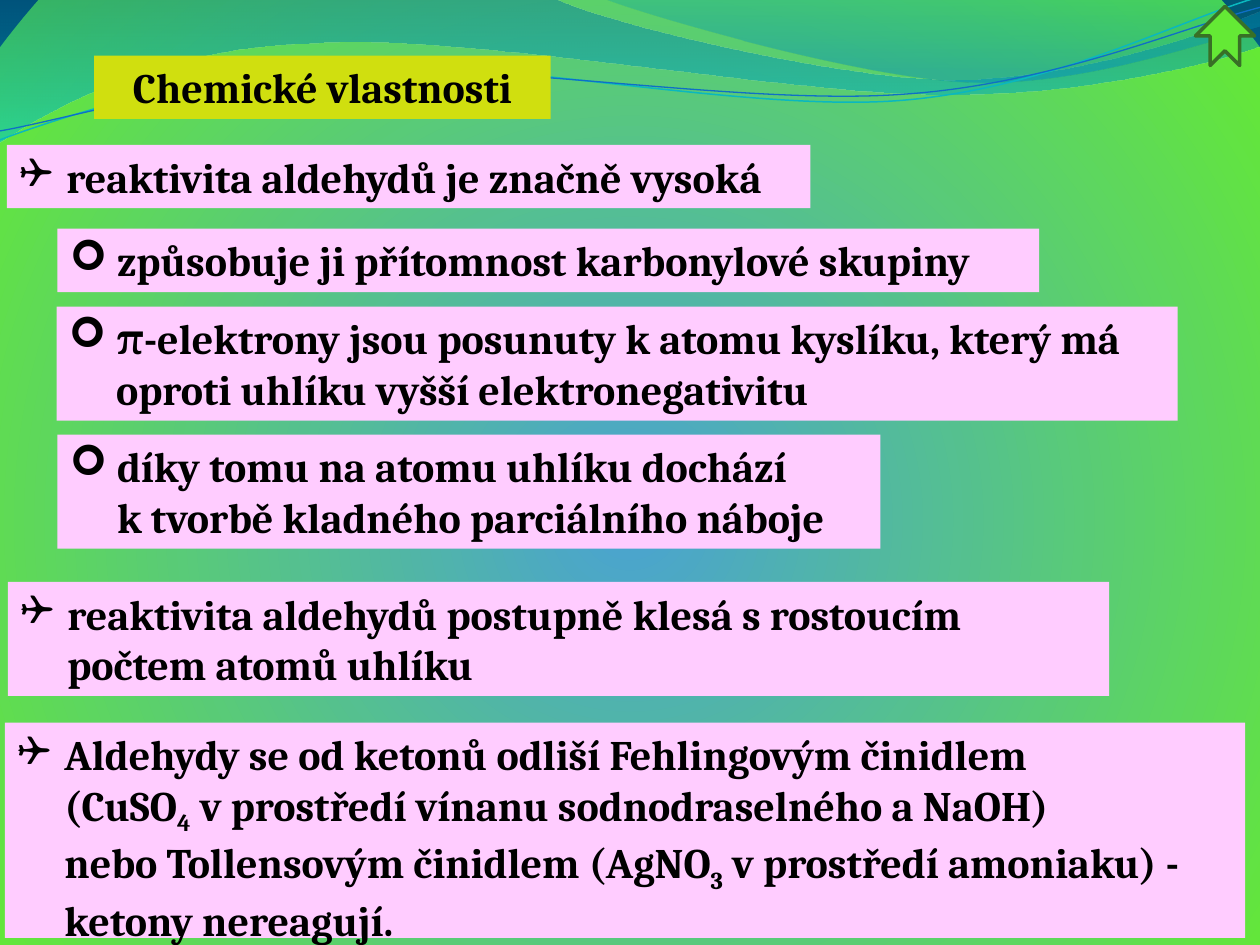
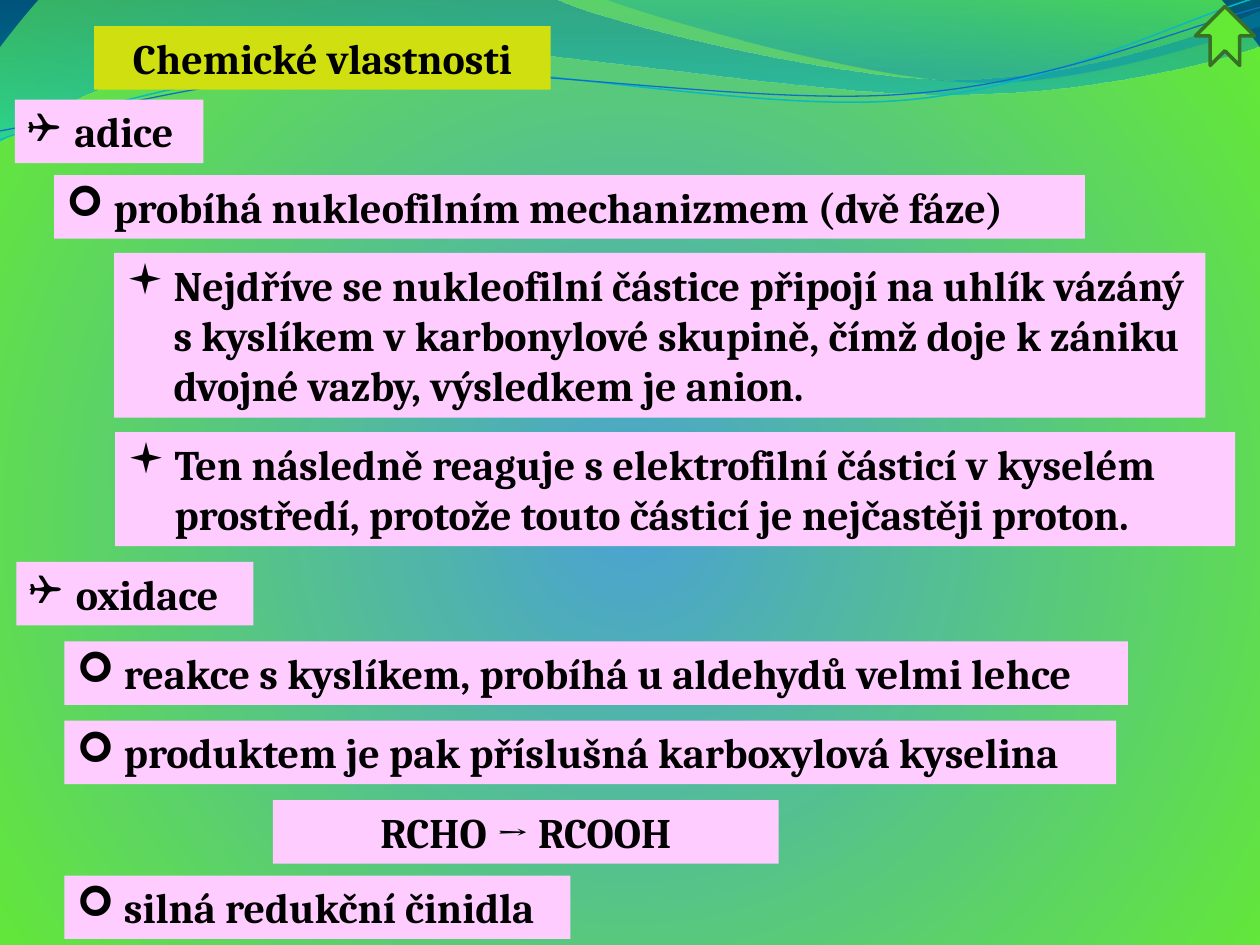
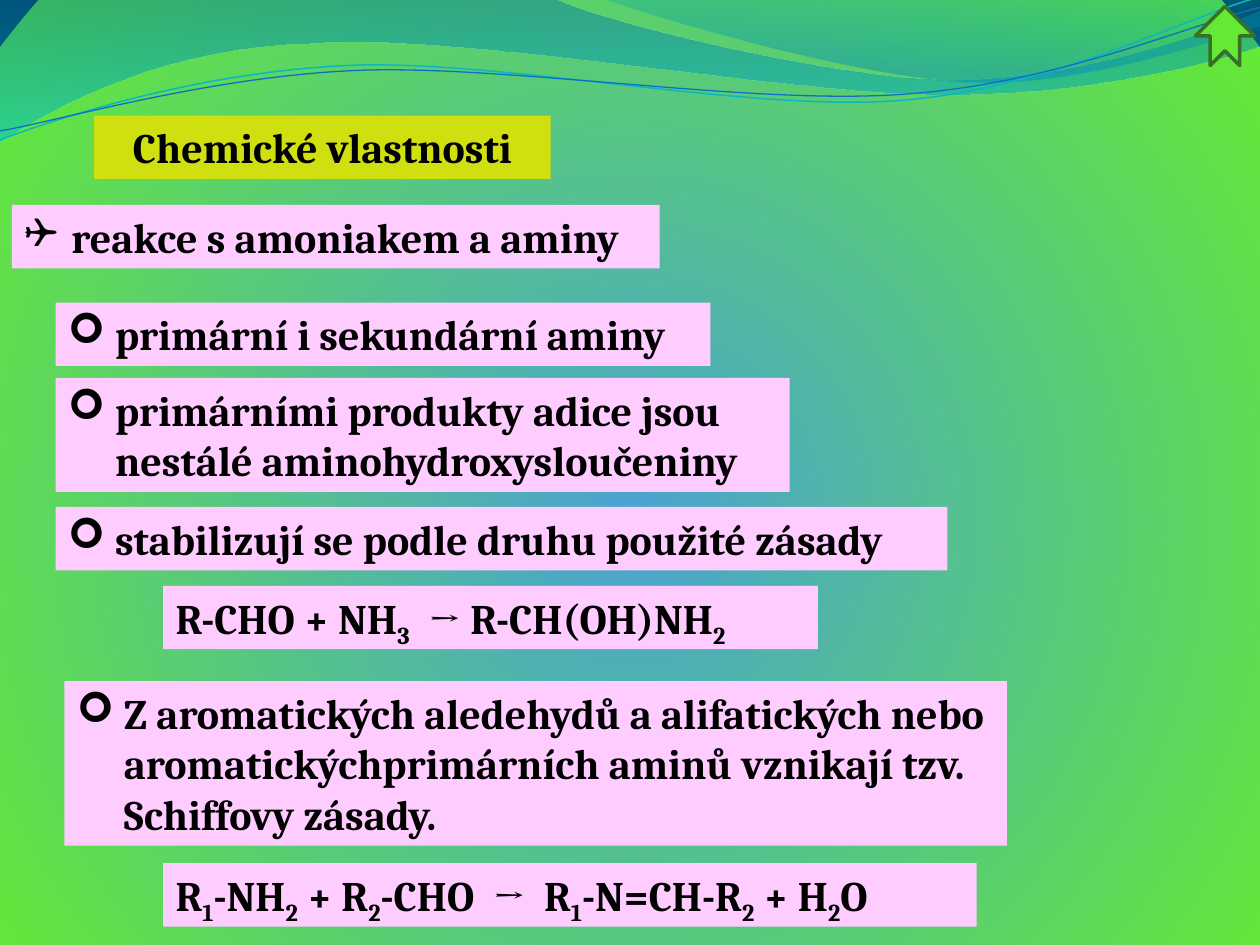
from lxml import etree
from pptx import Presentation
from pptx.dml.color import RGBColor
from pptx.enum.shapes import MSO_SHAPE as SHAPE
from pptx.enum.text import MSO_ANCHOR as ANCHOR, MSO_AUTO_SIZE as AUTO, PP_ALIGN as ALIGN
from pptx.oxml.ns import qn
from pptx.util import Cm, Pt

FONT, BULLET_FONT = "Cambria", "Wingdings"
BLACK, PINK, OLIVE, GREEN, DARK_GREEN = "000000", "FFCCFF", "D0DF0F", "64E935", "387026"
TOPIC, POINT, DETAIL = "❑", "➢", "▪"
INDENT = Cm(0.95)
NBSP = chr(160)

WIDE_BAND = [(0, 0), (11.18, -0.03), (12.09, 0.43, 16.87, 1.6, 19.25, 1.6),
             (21.67, 1.6, 24.33, 0.66, 25.4, 0.23), (25.43, 0.91),
             (24.97, 1.12, 22.1, 1.93, 18.95, 1.9), (15.8, 1.9, 9.7, 0.71, 6.53, 0.86),
             (3.28, 0.91, 1.17, 2.11, -0.03, 2.87)]
RIGHT_BAND = [(12.17, -0.03), (12.93, 0.28, 17.32, 1.57, 19.53, 1.65),
              (21.74, 1.75, 24.41, 0.81, 25.4, 0.53), (25.4, 0)]
LIGHT_WAVE = [(0, 2.82), (1.22, 2.36, 4.01, 1.45, 7.04, 1.32),
              (10.03, 1.19, 15.06, 2.26, 18.11, 2.03), (21.16, 1.8, 23.83, 0.38, 25.35, -0.05)]
DARK_WAVE = [(0, 2.64), (1.19, 2.44, 4.17, 1.55, 7.19, 1.42),
             (10.24, 1.3, 15.16, 2.13, 18.21, 1.9), (21.23, 1.7, 23.9, 0.53, 25.4, 0.15)]


def rgb(value):
    """Turn a hex string into a colour."""
    return RGBColor.from_string(value)


def add_xml(parent, tag, **attrs):
    """Append a DrawingML element to a parent."""
    return etree.SubElement(parent, qn(tag), {k: str(v) for k, v in attrs.items()})


def set_gradient(fill, owner, stops, **circle):
    """Give a fill gradient stops of (percent, colour, opacity)."""
    fill.gradient()
    grad = owner.find(".//" + qn("a:gradFill"))
    for child in list(grad):
        grad.remove(child)
    stop_list = add_xml(grad, "a:gsLst")
    for pos, colour, opacity in stops:
        stop = add_xml(stop_list, "a:gs", pos=pos * 1000)
        clr = add_xml(stop, "a:srgbClr", val=colour)
        if opacity < 100:
            add_xml(clr, "a:alpha", val=opacity * 1000)
    if circle:
        path = add_xml(grad, "a:path", path="circle")
        add_xml(path, "a:fillToRect", **circle)
    else:
        add_xml(grad, "a:lin", ang=90 * 60000, scaled=0)


def bend(sp, outline):
    """Join the control points of each curved segment into a cubic curve."""
    lines = iter(sp.element.findall(".//" + qn("a:lnTo")))
    for seg in outline[1:]:
        line = next(lines)
        if len(seg) == 6:
            cubic = etree.Element(qn("a:cubicBezTo"))
            line.getparent().replace(line, cubic)
            cubic.append(line[0])
            for _ in range(2):
                line = next(lines)
                line.getparent().remove(line)
                cubic.append(line[0])


def add_curve(s, outline, stops=None, line=None, width=0.75):
    """Draw a gradient band or an open wave line."""
    points = [(Cm(seg[i]), Cm(seg[i + 1])) for seg in outline for i in range(0, len(seg), 2)]
    builder = s.shapes.build_freeform(*points[0], scale=1.0)
    builder.add_line_segments(points[1:], close=bool(stops))
    sp = builder.convert_to_shape()
    bend(sp, outline)
    sp.shadow.inherit = False
    if stops:
        set_gradient(sp.fill, sp.element.spPr, stops)
        sp.line.fill.background()
    else:
        sp.fill.background()
        sp.line.color.rgb = rgb(line)
        sp.line.width = Pt(width)
    return sp


def add_text(p, text, size=24, colour=BLACK, bold=True, align=ALIGN.LEFT, bullet=None):
    """Fill a paragraph; underscores enclose subscripts, a tilde is a fixed space."""
    p.alignment = align
    if bullet:
        pPr = p._p.get_or_add_pPr()
        pPr.set("marL", str(INDENT))
        pPr.set("indent", str(-INDENT))
        add_xml(pPr, "a:buFont", typeface=BULLET_FONT)
        add_xml(pPr, "a:buChar", char=bullet)
    for i, part in enumerate(text.replace("~", NBSP).split("_")):
        for j, line in enumerate(part.split("\n")):
            if j:
                p.add_line_break()
            r = p.add_run()
            r.text = line
            r.font.name, r.font.size, r.font.bold = FONT, Pt(size), bold
            r.font.color.rgb = rgb(colour)
            if i % 2:
                r.font._element.set("baseline", "-25000")


def add_box(s, left, top, width, text, lines=1, fill=PINK, **text_format):
    """Add a filled text box as tall as its lines."""
    sp = s.shapes.add_shape(SHAPE.RECTANGLE, Cm(left), Cm(top), Cm(width),
                            Cm(0.26 + 1.02 * lines))
    sp.shadow.inherit = False
    sp.fill.solid()
    sp.fill.fore_color.rgb = rgb(fill)
    sp.line.fill.background()
    tf = sp.text_frame
    tf.word_wrap = True
    tf.auto_size = AUTO.SHAPE_TO_FIT_TEXT
    tf.vertical_anchor = ANCHOR.TOP
    add_text(tf.paragraphs[0], text, **text_format)


def add_up_arrow(s):
    """Add the notched arrow in the top right corner."""
    sp = s.shapes.add_shape(SHAPE.NOTCHED_RIGHT_ARROW, Cm(24.1), Cm(0.13), Cm(1.19), Cm(1.19))
    sp.rotation = 270
    sp.shadow.inherit = False
    sp.fill.solid()
    sp.fill.fore_color.rgb = rgb(GREEN)
    sp.line.color.rgb = rgb(DARK_GREEN)
    sp.line.width = Pt(2)


def add_slide(prs, title_top):
    """Add a blank slide with the shared title and arrow."""
    s = prs.slides.add_slide(prs.slide_layouts[6])
    add_box(s, 1.9, title_top, 9.2, "Chemické vlastnosti", fill=OLIVE, align=ALIGN.CENTER)
    add_up_arrow(s)
    return s


def decorate_master(prs, s):
    """Put the background, bands and waves on the master."""
    master = prs.slide_master
    set_gradient(master.background.fill, master.element,
                 [(0, "4AA2D2", 100), (100, GREEN, 100), (100, "00395E", 100)],
                 l=10000, t=110000, r=10000, b=100000)
    curves = [
        add_curve(s, WIDE_BAND, stops=[(0, "0074A1", 45), (100, "00C6CF", 55)]),
        add_curve(s, RIGHT_BAND, stops=[(0, "00A1A9", 30), (80, "008BBF", 45)]),
        add_curve(s, LIGHT_WAVE, line="0AB8BF", width=0.85),
        add_curve(s, DARK_WAVE, line="0F6FC6"),
    ]
    for sp in curves:
        master.shapes.element.append(sp.element)


def add_reactivity(prs):
    """Build the slide on reactivity."""
    s = add_slide(prs, 1.12)
    add_box(s, 1.14, 6.18, 22.6, "π-elektrony jsou posunuty k~atomu~kyslíku, který má "
            "oproti~uhlíku~vyšší~elektronegativitu", lines=2, bullet=POINT)
    add_box(s, 0.14, 2.92, 16.2, "reaktivita aldehydů je značně vysoká", bullet=TOPIC)
    add_box(s, 1.16, 4.61, 19.79, "způsobuje ji přítomnost karbonylové skupiny", bullet=POINT)
    add_box(s, 0.16, 11.73, 22.2, "reaktivita aldehydů postupně klesá s rostoucím "
            "počtem atomů uhlíku", lines=2, bullet=TOPIC)
    add_box(s, 1.16, 8.76, 16.59, "díky tomu na atomu uhlíku dochází \n"
            "k tvorbě kladného parciálního náboje", lines=2, bullet=POINT)
    add_box(s, 0.1, 14.57, 25, "Aldehydy se od ketonů odliší~Fehlingovým činidlem~\n"
            "(CuSO_4_~v prostředí~vínanu sodnodraselného~a~NaOH) "
            "nebo~Tollensovým činidlem~(AgNO_3_~v prostředí amoniaku) - "
            "ketony nereagují.", lines=4, bullet=TOPIC)
    return s


def add_addition_oxidation(prs):
    """Build the slide on addition and oxidation."""
    s = add_slide(prs, 0.53)
    add_box(s, 2.3, 5.1, 22, "Nejdříve se nukleofilní částice připojí na uhlík vázáný "
            "s kyslíkem v karbonylové skupině, čímž doje k zániku dvojné vazby, "
            "výsledkem je~anion.", lines=3, bullet=DETAIL)
    add_box(s, 0.3, 2.01, 3.8, "adice", bullet=TOPIC)
    add_box(s, 1.09, 3.53, 20.78, "probíhá nukleofilním mechanizmem (dvě fáze)", bullet=POINT)
    add_box(s, 0.33, 11.33, 4.78, "oxidace", bullet=TOPIC)
    add_box(s, 2.32, 8.71, 22.58, "Ten následně reaguje s elektrofilní částicí v kyselém "
            "prostředí, protože touto částicí je nejčastěji~proton.", lines=2, bullet=DETAIL)
    add_box(s, 5.5, 16.13, 10.2, "RCHO → RCOOH", align=ALIGN.CENTER)
    add_box(s, 1.3, 12.93, 21.44, "reakce s~kyslíkem, probíhá u aldehydů velmi lehce",
            bullet=POINT)
    add_box(s, 1.3, 14.53, 21.2, "produktem je pak příslušná karboxylová kyselina",
            bullet=POINT)
    add_box(s, 1.3, 17.65, 10.2, "silná redukční činidla", bullet=POINT)


def add_amines(prs):
    """Build the slide on ammonia and amines."""
    s = add_slide(prs, 2.33)
    add_box(s, 1.12, 7.62, 14.8, "primárními produkty adice jsou "
            "nestálé aminohydroxysloučeniny", lines=2, bullet=POINT)
    add_box(s, 0.24, 4.13, 13.06, "reakce s amoniakem a aminy", bullet=TOPIC)
    add_box(s, 1.12, 6.1, 13.2, "primární i sekundární aminy", bullet=POINT)
    add_box(s, 1.12, 10.22, 17.98, "stabilizují se podle druhu použité zásady", bullet=POINT)
    add_box(s, 3.29, 11.81, 13.2, "R-CHO + NH_3_~ → R-CH(OH)NH_2_")
    add_box(s, 1.3, 13.73, 19, "Z aromatických aledehydů a alifatických nebo "
            "aromatickýchprimárních aminů vznikají tzv. Schiffovy zásady.",
            lines=3, bullet=POINT)
    add_box(s, 3.29, 17.4, 16.4, "R_1_-NH_2_~+ R_2_-CHO~ →~ R_1_-N=CH-R_2_~+ H_2_O")


def main():
    """Build and save the presentation."""
    prs = Presentation()
    prs.slide_width, prs.slide_height = Cm(25.4), Cm(19.05)
    decorate_master(prs, add_reactivity(prs))
    add_addition_oxidation(prs)
    add_amines(prs)
    prs.save("out.pptx")


if __name__ == "__main__":
    main()
